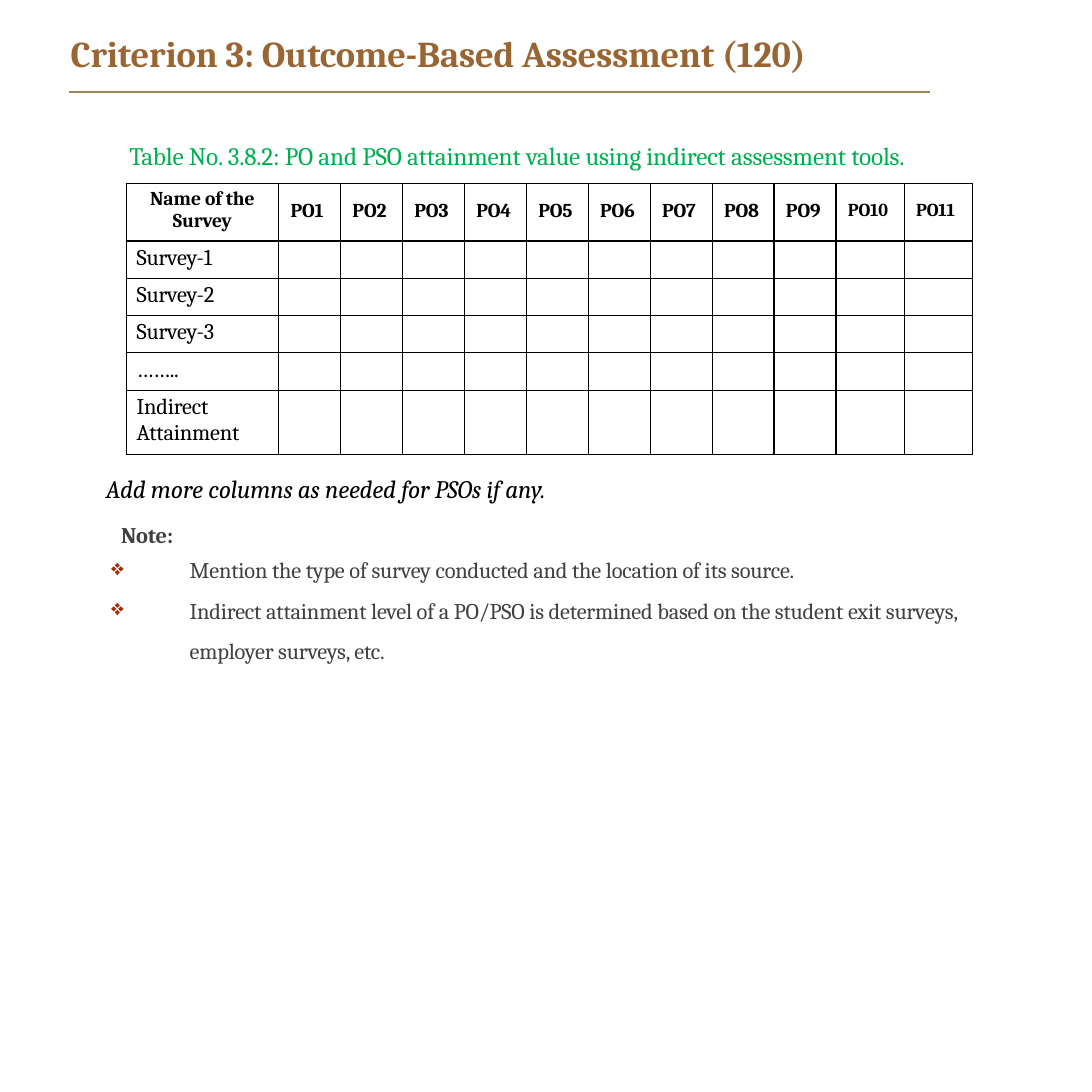
from lxml import etree
from pptx import Presentation
from pptx.dml.color import RGBColor
from pptx.enum.shapes import MSO_CONNECTOR
from pptx.enum.text import PP_ALIGN
from pptx.oxml import parse_xml
from pptx.oxml.ns import nsdecls, qn
from pptx.util import Cm, Pt

STRAIGHT = MSO_CONNECTOR.STRAIGHT
CENTER = PP_ALIGN.CENTER
COLORS = {
    "title": "996633", "rule": "9F8351", "caption": "00AF50", "text": "000000",
    "note": "404040", "bullet": "A42F0F", "paper": "FFFFFF",
}


def style(p, size, color, bold=False, italic=False):
    p.font.name = "Cambria"
    p.font.size = Pt(size)
    p.font.bold = bold
    p.font.italic = italic
    p.font.color.rgb = RGBColor.from_string(COLORS[color])
    p._p.pPr.find(qn("a:defRPr")).set("spc", "-10")


def add_text(left, top, width, height, text):
    tf = slide.shapes.add_textbox(Cm(left), Cm(top), Cm(width), Cm(height)).text_frame
    tf.word_wrap = True
    tf.margin_left = tf.margin_right = tf.margin_bottom = 0
    tf.margin_top = Cm(0.03)
    tf.text = text
    return tf


prs = Presentation()
prs.slide_width = prs.slide_height = Cm(27.51)
slide = prs.slides.add_slide(prs.slide_layouts[6])

# Title and rule
tf = add_text(1.78, 0.76, 19.43, 1.17, "Criterion 3: Outcome-Based Assessment (120)")
style(tf.paragraphs[0], 26, "title", bold=True)

rule = slide.shapes.add_connector(STRAIGHT, Cm(1.73), Cm(2.32), Cm(23.42), Cm(2.32))
rule.line.color.rgb = RGBColor.from_string(COLORS["rule"])
rule.line.width = Pt(1.75)
etree.SubElement(rule._element.spPr, qn("a:effectLst"))

# Table caption
tf = add_text(3.26, 3.51, 20.96, 0.84,
              "Table No. 3.8.2: PO and PSO attainment value using indirect assessment tools.")
style(tf.paragraphs[0], 18, "caption")

# Survey table
headings = ["Name of the\nSurvey"] + [f"PO{n}" for n in range(1, 12)]
surveys = ["Survey-1", "Survey-2", "Survey-3", "……..", "Indirect Attainment"]
col_widths = [3.84] + [1.56] * 9 + [1.72] * 2
row_heights = [1.44] + [0.94] * 4 + [1.61]

table = slide.shapes.add_table(
    len(row_heights), len(col_widths), Cm(3.18), Cm(4.63),
    Cm(sum(col_widths)), Cm(sum(row_heights))).table
table.first_row = table.horz_banding = False
for column, width in zip(table.columns, col_widths):
    column.width = Cm(width)
for row, height in zip(table.rows, row_heights):
    row.height = Cm(height)

for c, heading in enumerate(headings):
    table.cell(0, c).text = heading
for r, survey in enumerate(surveys, 1):
    table.cell(r, 0).text = survey

for r, row in enumerate(table.rows):
    for c, cell in enumerate(row.cells):
        cell.margin_left = cell.margin_right = cell.margin_bottom = 0
        cell.margin_top = Cm(0.1)
        if r == 0 and c > 0:
            cell.margin_left = Cm(0.3)
            cell.margin_top = Cm(0.41)
        elif r > 0:
            cell.margin_left = Cm(0.26)
        for p in cell.text_frame.paragraphs:
            if r == 0:
                style(p, 13 if c > 9 else 14, "text", bold=True)
                if c == 0:
                    p.alignment = CENTER
            else:
                style(p, 16, "text")
        tcPr = cell._tc.get_or_add_tcPr()
        for side in ("lnL", "lnR", "lnT", "lnB"):
            tcPr.append(parse_xml(
                f'<a:{side} {nsdecls("a")} w="12700"><a:solidFill>'
                f'<a:srgbClr val="{COLORS["text"]}"/></a:solidFill></a:{side}>'))
        cell.fill.solid()
        cell.fill.fore_color.rgb = RGBColor.from_string(COLORS["paper"])

# Remark and notes
notes = [
    "Mention the type of survey conducted and the location of its source.",
    "Indirect attainment level of a PO/PSO is determined based on the student exit "
    "surveys, employer surveys, etc.",
]
tf = add_text(2.67, 11.89, 23.01, 4.88,
              "\n".join(["Add more columns as needed for PSOs if any.", "Note:"] + notes))
remark, note, *items = tf.paragraphs
style(remark, 18, "text", italic=True)
style(note, 16, "note", bold=True)
note.space_before = Pt(12.6)
note._p.pPr.set("marL", str(Cm(0.38)))
for p in items:
    style(p, 16, "note")
    pPr = p._p.pPr
    pPr.set("marL", str(Cm(2.11)))
    pPr.set("indent", str(Cm(-1.98)))
    defRPr = pPr.find(qn("a:defRPr"))
    defRPr.addprevious(parse_xml(
        f'<a:buClr {nsdecls("a")}><a:srgbClr val="{COLORS["bullet"]}"/></a:buClr>'))
    defRPr.addprevious(parse_xml(f'<a:buChar {nsdecls("a")} char="❖"/>'))
items[0].space_before = Pt(6.1)
items[1].line_spacing = 1.5

prs.save("out.pptx")
